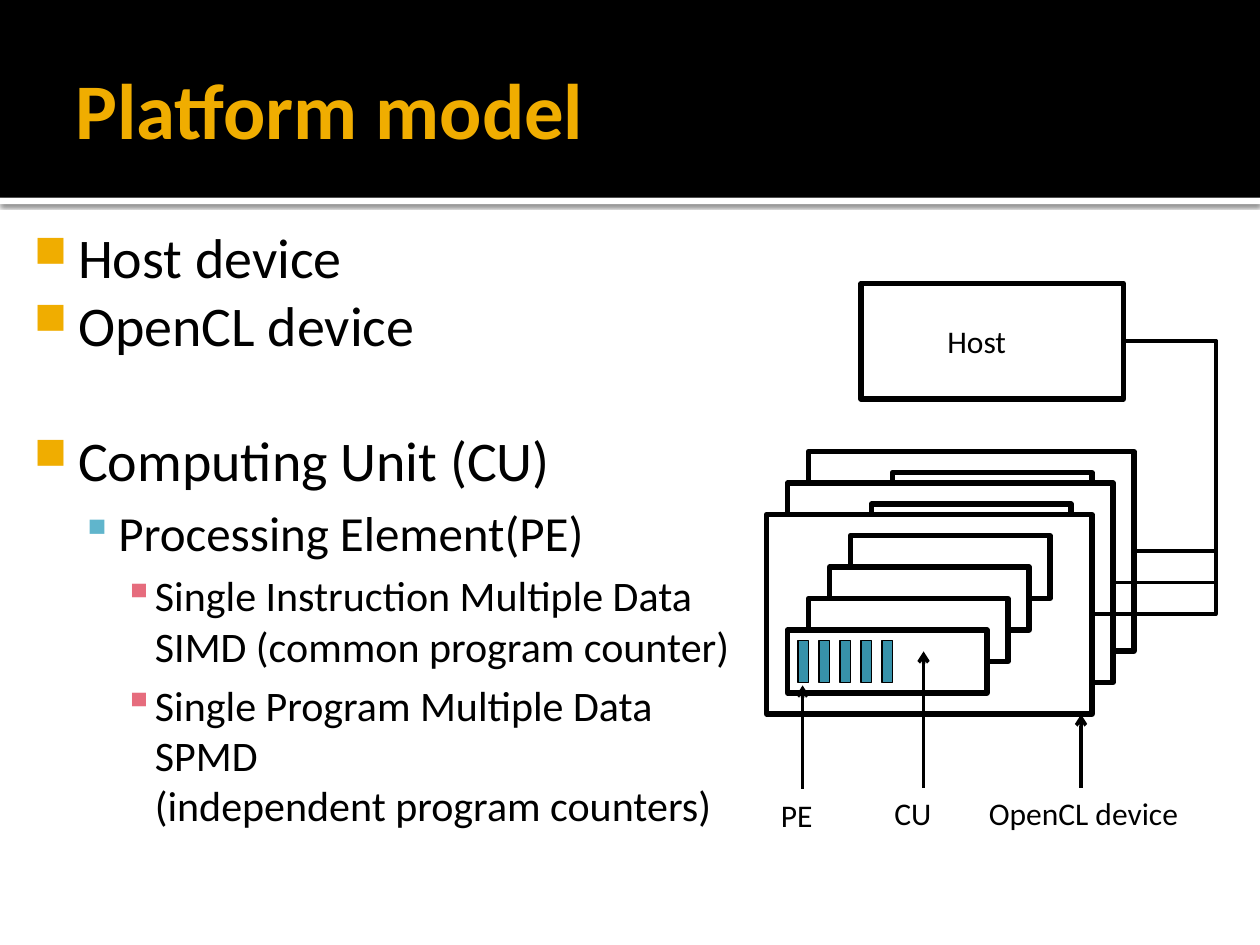
from lxml import etree
from pptx import Presentation
from pptx.dml.color import RGBColor
from pptx.enum.shapes import MSO_CONNECTOR, MSO_SHAPE
from pptx.enum.text import MSO_ANCHOR, PP_ALIGN
from pptx.oxml.ns import qn
from pptx.util import Inches, Pt

RECT = MSO_SHAPE.RECTANGLE
LINE, ELBOW = MSO_CONNECTOR.STRAIGHT, MSO_CONNECTOR.ELBOW
LEFT, MIDDLE, TOP = PP_ALIGN.LEFT, MSO_ANCHOR.MIDDLE, MSO_ANCHOR.TOP

THEME = {
    "font": "Calibri",
    "ink": "000000", "paper": "FFFFFF", "gold": "F0AD00", "unit": "3792AA",
    "title": 45, "label": 18,
    "box": 3, "wire": 2, "thin": 1,
}

TITLE = "Platform model"
# level, text, space before in points
POINTS = [
    (0, "Host device", 0),
    (0, "OpenCL device", 0),
    (0, "Computing Unit (CU)", 39),
    (1, "Processing Element(PE)", 5.6),
    (2, "Single Instruction Multiple Data\nSIMD (common program counter)", 4.8),
    (2, "Single Program Multiple Data\nSPMD\n(independent program counters)", 4.8),
]
LEVELS = [
    {"size": 32, "left": 0.48, "hang": 0.35, "mark": "■", "color": "F0AD00", "scale": 80},
    {"size": 28, "left": 0.8, "hang": 0.3, "mark": "▪", "color": "60B5CC", "scale": 90},
    {"size": 24, "left": 1.09, "hang": 0.25, "mark": "▪", "color": "E66C7D", "scale": 100},
]
LABELS = [
    ("Host", 7.42, 2.51, 0.92),
    ("PE", 6.1, 6.27, 0.5),
    ("CU", 7, 6.25, 0.67),
    ("OpenCL device", 7.75, 6.25, 2.17),
]
ARROWS = [(7.33, 6.25, 5.17), (6.37, 6.26, 5.44), (8.58, 6.25, 5.67)]  # x, foot, tip

# The diagram lies on a grid of twelfths of an inch
GRID = 12
HOST = (82, 27, 25, 11)
DEVICE = (77, 43, 31, 19)
CORE = (85, 45, 19, 6)
ELEMENT = (76, 61, 1, 4)
STEP = (-2, 3)
CORES = [1, 1, 4]
ELEMENTS = 5
BUS = 9.65


def rgb(name):
    return RGBColor.from_string(THEME.get(name, name))


def sub(parent, tag, **attrs):
    node = etree.SubElement(parent, qn(tag))
    for key, value in attrs.items():
        node.set(key, str(value))
    return node


def shift(cell, n, step=STEP):
    x, y, w, h = cell
    return x + n * step[0], y + n * step[1], w, h


def box(shapes, at, fill, line=None):
    shape = shapes.add_shape(RECT, *map(Inches, at))
    shape.shadow.inherit = False
    shape.fill.solid()
    shape.fill.fore_color.rgb = rgb(fill)
    if line:
        shape.line.color.rgb = rgb("ink")
        shape.line.width = Pt(THEME[line])
    else:
        shape.line.fill.background()
    return shape


def cell(shapes, at, fill="paper", line="box"):
    return box(shapes, [n / GRID for n in at], fill, line)


def wire(shapes, kind, *ends):
    link = shapes.add_connector(kind, *map(Inches, ends))
    link.line.color.rgb = rgb("ink")
    link.line.width = Pt(THEME["wire"])
    sub(link._element.spPr, "a:effectLst")
    return link


def frame(shape, insets, anchor=TOP):
    text = shape.text_frame
    sides = ("margin_left", "margin_top", "margin_right", "margin_bottom")
    form = dict(zip(sides, map(Inches, insets)))
    form.update(word_wrap=True, vertical_anchor=anchor)
    for key, value in form.items():
        setattr(text, key, value)
    return text


def write(para, text, size, color="ink", bold=False):
    para.text = text
    para.alignment = LEFT
    form = {"name": THEME["font"], "size": Pt(size), "bold": bold}
    for run in para.runs:
        for key, value in form.items():
            setattr(run.font, key, value)
        run.font.color.rgb = rgb(color)


def bullet(para, style):
    props = para._p.get_or_add_pPr()
    props.set("marL", str(Inches(style["left"])))
    props.set("indent", str(-Inches(style["hang"])))
    sub(sub(props, "a:buClr"), "a:srgbClr", val=style["color"])
    sub(props, "a:buSzPct", val=style["scale"] * 1000)
    sub(props, "a:buChar", char=style["mark"])


def header(slide):
    strip = box(slide.shapes, (0, 1.57, 10, 0.05), "paper")
    effects = strip._element.spPr.find(qn("a:effectLst"))
    shadow = sub(effects, "a:outerShdw", blurRad=Pt(2.5), dist=Pt(0.8),
                 dir=90 * 60000, algn="tl", rotWithShape=0)
    sub(sub(shadow, "a:srgbClr", val=THEME["ink"]), "a:alpha", val=60000)
    box(slide.shapes, (0, 0, 10, 1.57), "ink")

    title = slide.shapes.title
    title.left, title.top, title.width, title.height = map(Inches, (0.5, 0.17, 9, 1.37))
    text = frame(title, (0.1, 0.05, 0.05, 0.05), MIDDLE)
    write(text.paragraphs[0], TITLE, THEME["title"], "gold", True)
    slide.shapes._spTree.append(title._element)  # in front of the band


def outline(shapes):
    area = shapes.add_textbox(*map(Inches, (0.08, 1.67, 9, 5.06)))
    text = frame(area, (0.06, 0.1, 0.1, 0.05))
    for n, (level, words, gap) in enumerate(POINTS):
        para = text.add_paragraph() if n else text.paragraphs[0]
        style = LEVELS[level]
        write(para, words, style["size"])
        para.level = level
        para.space_before = Pt(gap)
        bullet(para, style)


def diagram(shapes):
    for n, count in enumerate(CORES):
        group = shapes.add_group_shape().shapes
        cell(group, shift(DEVICE, n))
        for k in range(count):
            cell(group, shift(CORE, n + k))
    for k in range(ELEMENTS):  # the last group is the front device
        cell(group, shift(ELEMENT, k, (2, 0)), "unit", "thin")
    cell(shapes, HOST)

    def port(x, y, w, h):
        """Middle of the right side, in inches."""
        return (x + w) / GRID, (y + h / 2) / GRID

    start = port(*HOST)
    for n in range(len(CORES)):
        end = port(*shift(DEVICE, n))
        link = wire(shapes, ELBOW, *start, *end)
        bend = round((BUS - start[0]) / (end[0] - start[0]) * 100000)
        guides = link._element.spPr.find(qn("a:prstGeom")).find(qn("a:avLst"))
        sub(guides, "a:gd", name="adj1", fmla=f"val {bend}")

    for x, foot, tip in ARROWS:
        link = wire(shapes, LINE, x, foot, x, tip)
        sub(link.line._get_or_add_ln(), "a:tailEnd", type="arrow")
    for words, x, y, width in LABELS:
        label = shapes.add_textbox(*map(Inches, (x, y, width, 0.4)))
        text = frame(label, (0.1, 0.05, 0.1, 0.05))
        write(text.paragraphs[0], words, THEME["label"])


def main():
    deck = Presentation()
    deck.slide_width, deck.slide_height = Inches(10), Inches(7.5)
    slide = deck.slides.add_slide(deck.slide_layouts[5])
    header(slide)
    outline(slide.shapes)
    diagram(slide.shapes)
    deck.save("out.pptx")


if __name__ == "__main__":
    main()
